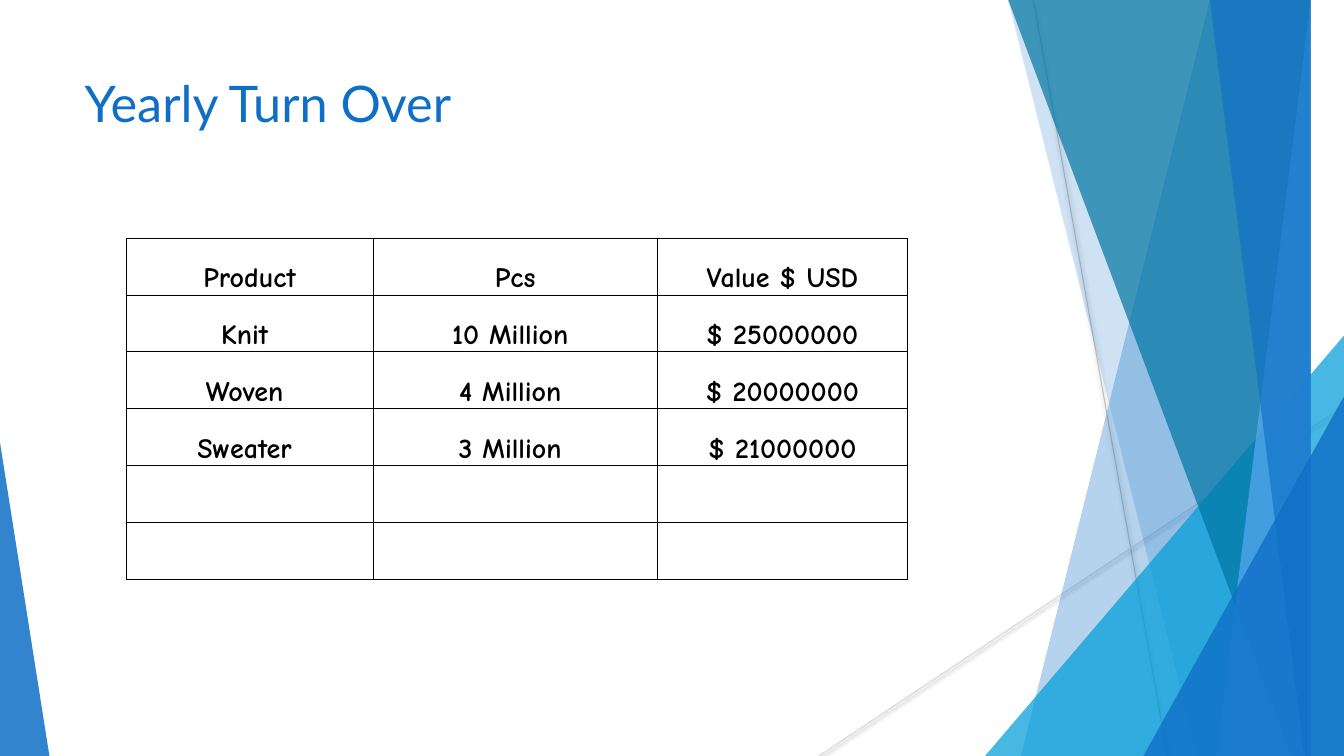
from lxml import etree
from pptx import Presentation
from pptx.dml.color import RGBColor
from pptx.enum.shapes import MSO_CONNECTOR, MSO_SHAPE
from pptx.enum.text import MSO_ANCHOR, PP_ALIGN
from pptx.oxml.ns import qn
from pptx.util import Inches, Pt

LINE = MSO_CONNECTOR.STRAIGHT
TRIANGLE = MSO_SHAPE.ISOSCELES_TRIANGLE
TOP, BOTTOM = MSO_ANCHOR.TOP, MSO_ANCHOR.BOTTOM
LEFT, CENTER = PP_ALIGN.LEFT, PP_ALIGN.CENTER

WIDE, HIGH = 13.33, 7.5
BLUE, SKY, TEAL, PALE, BLACK = "0F6FC6", "009DD9", "0076A3", "59AAF2", "000000"

# Bands and corners from back to front
FACETS = [
    ("band", 12.28, 10.04, BLUE, 30),
    ("band", 10.5, 11.83, BLUE, 20),
    ("corner", 3.56, 4.17, SKY, 72),
    ("band", 10.21, 12.91, TEAL, 70),
    ("band", 13.03, 11.92, PALE, 70),
    ("band", 11.96, 13.18, BLUE, 65),
    ("corner", 1.99, 3.57, BLUE, 80),
]
ROWS = [
    ("Product", "Pcs", "Value $ USD"),
    ("Knit ", "10 Million ", "$ 25000000"),
    ("Woven ", "4 Million ", "$ 20000000"),
    ("Sweater ", "3 Million ", "$ 21000000"),
    ("", "", ""),
    ("", "", ""),
]


def color(code):
    return RGBColor.from_string(code)


def node(parent, tag, **attrs):
    return etree.SubElement(parent, qn(tag), attrs)


def tint(shape, code, alpha):
    """Fill a shape with a see-through colour, without line or shadow."""
    shape.shadow.inherit = False
    shape.line.fill.background()
    shape.fill.solid()
    shape.fill.fore_color.rgb = color(code)
    fill = shape.fill._xPr.find(qn("a:solidFill"))
    node(fill[0], "a:alpha", val=str(alpha * 1000))


def ray(slide, start, end, code):
    """Draw a thin line with a soft shadow below it."""
    line = slide.shapes.add_connector(LINE, *map(Inches, start + end))
    line.line.color.rgb = color(code)
    line.line.width = Pt(0.75)
    effects = node(line._element.spPr, "a:effectLst")
    shade = node(effects, "a:outerShdw", blurRad=str(Pt(3.1)), dist=str(Pt(1.6)),
                 dir="5400000", rotWithShape="0")
    node(node(shade, "a:srgbClr", val=BLACK), "a:alpha", val="38000")


def band(slide, top, base, code, alpha):
    """Fill from a slanted left edge to the right side of the slide."""
    pen = slide.shapes.build_freeform(top, 0, scale=Inches(1))
    pen.add_line_segments([(WIDE, 0), (WIDE, HIGH), (base, HIGH)])
    tint(pen.convert_to_shape(), code, alpha)


def corner(slide, wide, high, code, alpha, side=1):
    """Put a right triangle in a lower corner; side 0 is left, 1 is right."""
    box = (side * (WIDE - wide), HIGH - high, wide, high)
    shape = slide.shapes.add_shape(TRIANGLE, *map(Inches, box))
    shape.adjustments[0] = side
    tint(shape, code, alpha)


def decor(slide):
    ray(slide, (10.25, 0), (11.58, HIGH), "BFBFBF")
    ray(slide, (WIDE, 4.03), (8.12, HIGH), "D9D9D9")
    draw = {"band": band, "corner": corner}
    for kind, *rest in FACETS:
        draw[kind](slide, *rest)
    corner(slide, 0.49, 3.11, BLUE, 85, side=0)


def write(para, text, font, size, code, align, bold=False):
    para.alignment = align
    run = para.add_run()
    run.text = text
    run.font.name, run.font.size, run.font.bold = font, Pt(size), bold
    run.font.color.rgb = color(code)


def title(slide, box, text):
    shape = slide.shapes.title
    slide.shapes._spTree.append(shape._element)
    shape.left, shape.top, shape.width, shape.height = map(Inches, box)
    frame = shape.text_frame
    frame.word_wrap = True
    frame.vertical_anchor = TOP
    write(frame.paragraphs[0], text, "Lato", 36, BLUE, LEFT)


def border(cell):
    props = cell._tc.get_or_add_tcPr()
    for edge in "LRTB":
        line = node(props, f"a:ln{edge}", w=str(Pt(0.5)))
        node(node(line, "a:solidFill"), "a:srgbClr", val=BLACK)


def sales(slide, box, widths):
    frame = slide.shapes.add_table(len(ROWS), len(widths), *map(Inches, box))
    table = frame.table
    table.first_row = table.horz_banding = False
    for col, wide in zip(table.columns, widths):
        col.width = Inches(wide)
    for r, row in enumerate(ROWS):
        for c, text in enumerate(row):
            cell = table.cell(r, c)
            border(cell)
            cell.fill.background()
            if text:
                cell.vertical_anchor = BOTTOM
                cell.margin_left = cell.margin_right = cell.margin_top = Inches(0.01)
                cell.margin_bottom = 0
                write(cell.text_frame.paragraphs[0], text, "Comic Neue", 20,
                      BLACK, CENTER, bold=True)


def main():
    deck = Presentation()
    deck.slide_width, deck.slide_height = Inches(WIDE), Inches(HIGH)
    slide = deck.slides.add_slide(deck.slide_layouts[5])
    decor(slide)
    title(slide, (0.74, 0.67, 9.4, 1.44), "Yearly Turn Over")
    sales(slide, (1.25, 2.36, 7.75, 3.39), (2.45, 2.82, 2.48))
    deck.save("out.pptx")


if __name__ == "__main__":
    main()
